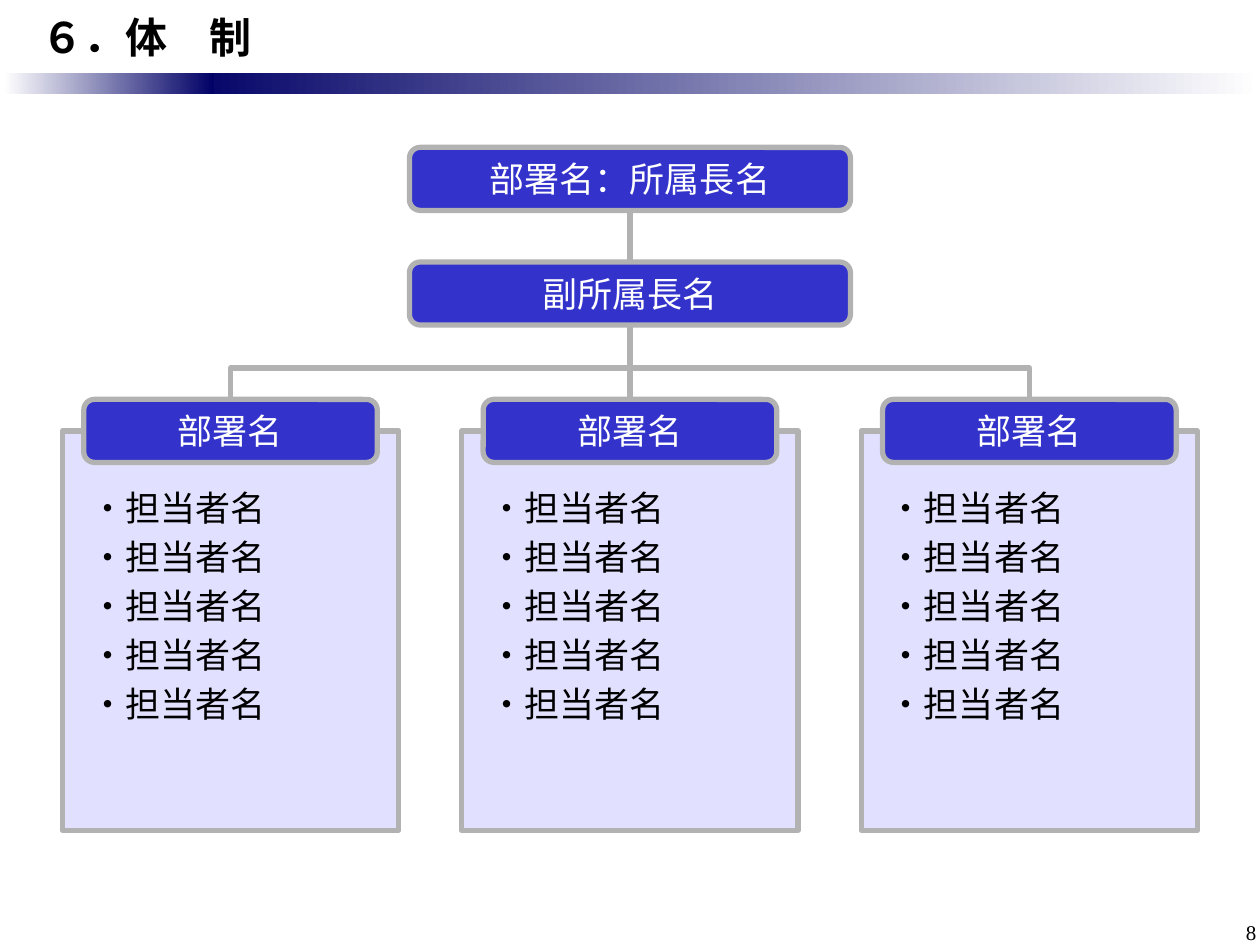
from lxml import etree
from pptx import Presentation, util as u
from pptx.dml.color import RGBColor
from pptx.enum import shapes, text
from pptx.oxml import ns

COLORS = {"navy": "000066", "white": "FFFFFF", "black": "000000",
          "box": "3333CC", "panel": "E1E1FF", "rule": "B2B2B2"}
GOTHIC, SERIF = "Noto Sans CJK JP", "Times New Roman"
LEFT, CENTER, RIGHT = text.PP_ALIGN.LEFT, text.PP_ALIGN.CENTER, text.PP_ALIGN.RIGHT
TOP, MIDDLE = text.MSO_ANCHOR.TOP, text.MSO_ANCHOR.MIDDLE


class OrgChart:
    """Holds the chart style and the slide being drawn."""

    def __init__(self, slide, size=20, line_width=3):
        self.slide, self.size, self.line_width = slide, size, line_width

    def color(self, name):
        return RGBColor.from_string(COLORS[name])

    def outline(self, part):
        part.line.color.rgb = self.color("rule")
        part.line.width = u.Pt(self.line_width)

    def add_lines(self, part, lines, color, align=LEFT, anchor=TOP,
                  insets=(0.1, 0.05, 0.1, 0.05), size=None, font=GOTHIC,
                  bold=False, wrap=False, after=0):
        frame = part.text_frame
        frame.word_wrap, frame.vertical_anchor = wrap, anchor
        (frame.margin_left, frame.margin_top,
         frame.margin_right, frame.margin_bottom) = map(u.Inches, insets)
        for i, line in enumerate(lines):
            para = frame.add_paragraph() if i else frame.paragraphs[0]
            para.alignment, para.space_after = align, u.Pt(after)
            run = para.add_run()
            run.text = line
            run.font.size, run.font.bold = u.Pt(size or self.size), bold
            run.font.color.rgb = self.color(color)
            run.font.name = font
            # East Asian typeface
            etree.SubElement(run.font._element, ns.qn("a:ea"), typeface=font)

    def shape(self, kind, box, fill=None):
        part = self.slide.shapes.add_shape(kind, *map(u.Inches, box))
        part.shadow.inherit = False
        if fill:
            part.fill.solid()
            part.fill.fore_color.rgb = self.color(fill)
            self.outline(part)
        return part

    def fade(self, box, start, end):
        band = self.shape(shapes.MSO_SHAPE.RECTANGLE, box)
        band.line.fill.background()
        band.fill.gradient()
        band.fill.gradient_angle = 0
        for stop, name in zip(band.fill.gradient_stops, (start, end)):
            stop.color.rgb = self.color(name)

    def label(self, box, line, **style):
        part = self.slide.shapes.add_textbox(*map(u.Inches, box))
        self.add_lines(part, [line], "black", wrap=True, **style)

    def box(self, box, name):
        part = self.shape(shapes.MSO_SHAPE.ROUNDED_RECTANGLE, box, "box")
        part.adjustments[0] = 0.17
        self.add_lines(part, [name], "white", CENTER, MIDDLE)

    def panel(self, box, members):
        part = self.shape(shapes.MSO_SHAPE.RECTANGLE, box, "panel")
        self.add_lines(part, members, "black", insets=(0.22, 0.44, 0.1, 0.05), after=4)

    def bracket(self, points):
        start, *rest = [tuple(map(u.Inches, point)) for point in points]
        builder = self.slide.shapes.build_freeform(*start)
        builder.add_line_segments(rest, close=False)
        part = builder.convert_to_shape()
        part.shadow.inherit = False
        part.fill.background()
        self.outline(part)

    def stem(self, x, top, bottom):
        part = self.slide.shapes.add_connector(
            shapes.MSO_CONNECTOR.STRAIGHT, *map(u.Inches, (x, top, x, bottom)))
        self.outline(part)
        etree.SubElement(part._element.spPr, ns.qn("a:effectLst"))


def main():
    deck = Presentation()
    deck.slide_width, deck.slide_height = u.Inches(10), u.Inches(7.5)
    chart = OrgChart(deck.slides.add_slide(deck.slide_layouts[6]))

    # Header band, title and page number
    chart.fade((1.42, 0.58, 8.58, 0.17), "navy", "white")
    chart.fade((0.03, 0.58, 1.67, 0.17), "white", "navy")
    chart.label((0, 0, 10, 0.58), "６．体　制", size=24, bold=True, anchor=MIDDLE,
                insets=(0.33, 0.05, 0.1, 0.05))
    chart.label((9.42, 7.25, 0.58, 0.25), "8", size=12, font=SERIF, align=RIGHT,
                insets=(0.1, 0.05, 0.03, 0.05))

    # Three departments, evenly spaced around the centre line
    middle, pitch = 5, 3.17
    centers = [middle + pitch * k for k in (-1, 0, 1)]
    panel_width, name_width, head_width = 2.67, 2.33, 3.5

    # Branch lines and member panels
    first, last = centers[0], centers[-1]
    chart.bracket([(first, 3.42), (first, 2.92), (last, 2.92), (last, 3.42)])
    for x in centers:
        chart.panel((x - panel_width / 2, 3.42, panel_width, 3.17), ["・担当者名"] * 5)
    chart.stem(middle, 1.5, 3.25)

    # Heads and department names
    for top, head in ((1.17, "部署名：所属長名"), (2.08, "副所属長名")):
        chart.box((middle - head_width / 2, top, head_width, 0.5), head)
    for x in centers:
        chart.box((x - name_width / 2, 3.17, name_width, 0.5), "部署名")

    deck.save("out.pptx")


if __name__ == "__main__":
    main()
